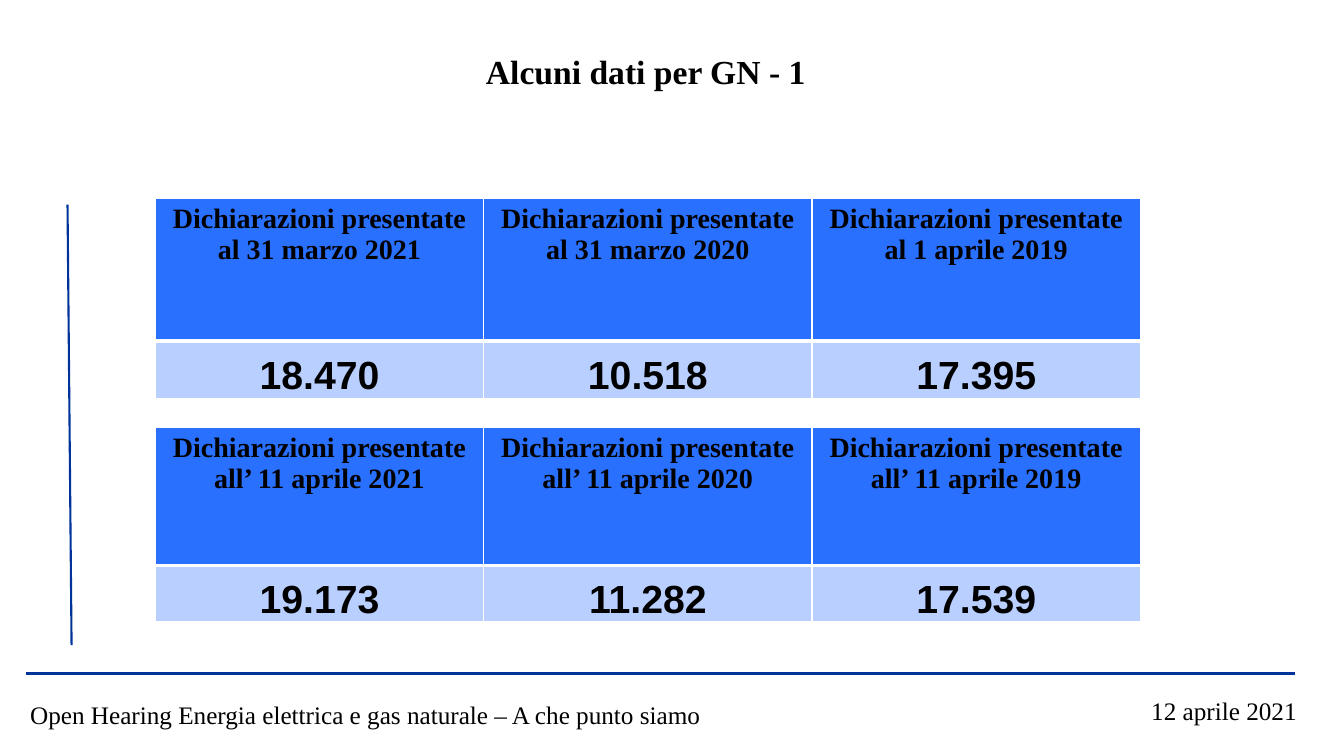
import pptx
import pptx.util
import pptx.dml.color
import pptx.enum.shapes
import pptx.enum.text
import pptx.oxml.ns
from lxml import etree

Inches = pptx.util.Inches
Pt = pptx.util.Pt
RGBColor = pptx.dml.color.RGBColor
Align = pptx.enum.text.PP_ALIGN
Anchor = pptx.enum.text.MSO_ANCHOR
qn = pptx.oxml.ns.qn

BLACK = RGBColor(0x00, 0x00, 0x00)
WHITE = RGBColor(0xFF, 0xFF, 0xFF)
NAVY = RGBColor(0x00, 0x33, 0x99)
HEADER_BLUE = RGBColor(0x29, 0x70, 0xFF)
VALUE_BLUE = RGBColor(0xB8, 0xCF, 0xFF)
SERIF = "Times New Roman"
SANS = "Arial"

TABLE_LEFT = 1.54
COLUMN_WIDTH = 3.257
# Top, row heights, headers and values of each table
TABLES = [
    (1.97, (1.41, 0.57),
     ("al 31 marzo 2021", "al 31 marzo 2020", "al 1 aprile 2019"),
     ("18.470", "10.518", "17.395")),
    (4.24, (1.37, 0.56),
     ("all’ 11 aprile 2021", "all’ 11 aprile 2020", "all’ 11 aprile 2019"),
     ("19.173", "11.282", "17.539")),
]


def write(tf, text, size, font=SERIF, bold=False, align=Align.LEFT):
    p = tf.paragraphs[0]
    p.alignment = align
    r = p.add_run()
    r.text = text
    r.font.size = Pt(size)
    r.font.name = font
    r.font.bold = bold
    r.font.color.rgb = BLACK


def add_text(s, left, top, width, height, text, size, **style):
    tf = s.shapes.add_textbox(
        Inches(left), Inches(top), Inches(width), Inches(height)).text_frame
    tf.word_wrap = True
    tf.auto_size = pptx.enum.text.MSO_AUTO_SIZE.SHAPE_TO_FIT_TEXT
    write(tf, text, size, **style)


def add_line(s, x1, y1, x2, y2, width):
    line = s.shapes.add_connector(
        pptx.enum.shapes.MSO_CONNECTOR.STRAIGHT,
        Inches(x1), Inches(y1), Inches(x2), Inches(y2))
    line.line.color.rgb = NAVY
    line.line.width = Pt(width)
    etree.SubElement(line._element.spPr, qn("a:effectLst"))


def style_cell(cell, color, top, bottom):
    """Draw white borders, then the fill, as the schema orders them."""
    tcPr = cell._tc.get_or_add_tcPr()
    for side, width in (("L", 1), ("R", 1), ("T", top), ("B", bottom)):
        ln = etree.SubElement(tcPr, qn(f"a:ln{side}"), w=str(Pt(width)))
        fill = etree.SubElement(ln, qn("a:solidFill"))
        etree.SubElement(fill, qn("a:srgbClr"), val=str(WHITE))
    cell.fill.solid()
    cell.fill.fore_color.rgb = color


def add_declarations(s, top, heights, dates, values):
    table = s.shapes.add_table(
        2, len(dates), Inches(TABLE_LEFT), Inches(top),
        Inches(COLUMN_WIDTH * len(dates)), Inches(sum(heights))).table
    for row, height in zip(table.rows, heights):
        row.height = Inches(height)
    for col, (date, value) in enumerate(zip(dates, values)):
        table.columns[col].width = Inches(COLUMN_WIDTH)
        header, total = table.cell(0, col), table.cell(1, col)
        style_cell(header, HEADER_BLUE, 1, 3)
        write(header.text_frame, f"Dichiarazioni presentate {date}", 20,
              bold=True, align=Align.CENTER)
        style_cell(total, VALUE_BLUE, 3, 1)
        total.vertical_anchor = Anchor.BOTTOM
        total.margin_left = total.margin_right = total.margin_top = Inches(0.01)
        total.margin_bottom = 0
        write(total.text_frame, value, 28, font=SANS, bold=True,
              align=Align.CENTER)


def main():
    prs = pptx.Presentation()
    prs.slide_width = Inches(13.33)
    prs.slide_height = Inches(7.5)
    s = prs.slides.add_slide(prs.slide_layouts[6])
    add_line(s, 0.26, 6.68, 12.84, 6.68, 2.25)
    add_text(s, 1.54, 0.46, 9.73, 0.5, "Alcuni dati per GN - 1", 24,
             bold=True, align=Align.CENTER)
    for top, heights, dates, values in TABLES:
        add_declarations(s, top, heights, dates, values)
    add_text(s, 0.2, 6.89, 7.61, 0.4,
             "Open Hearing Energia elettrica e gas naturale – A che punto siamo",
             18)
    add_text(s, 11.32, 6.85, 1.7, 0.4, "12 aprile 2021", 18)
    add_line(s, 0.67, 2.03, 0.71, 6.4, 1.5)
    prs.save("out.pptx")


if __name__ == "__main__":
    main()
